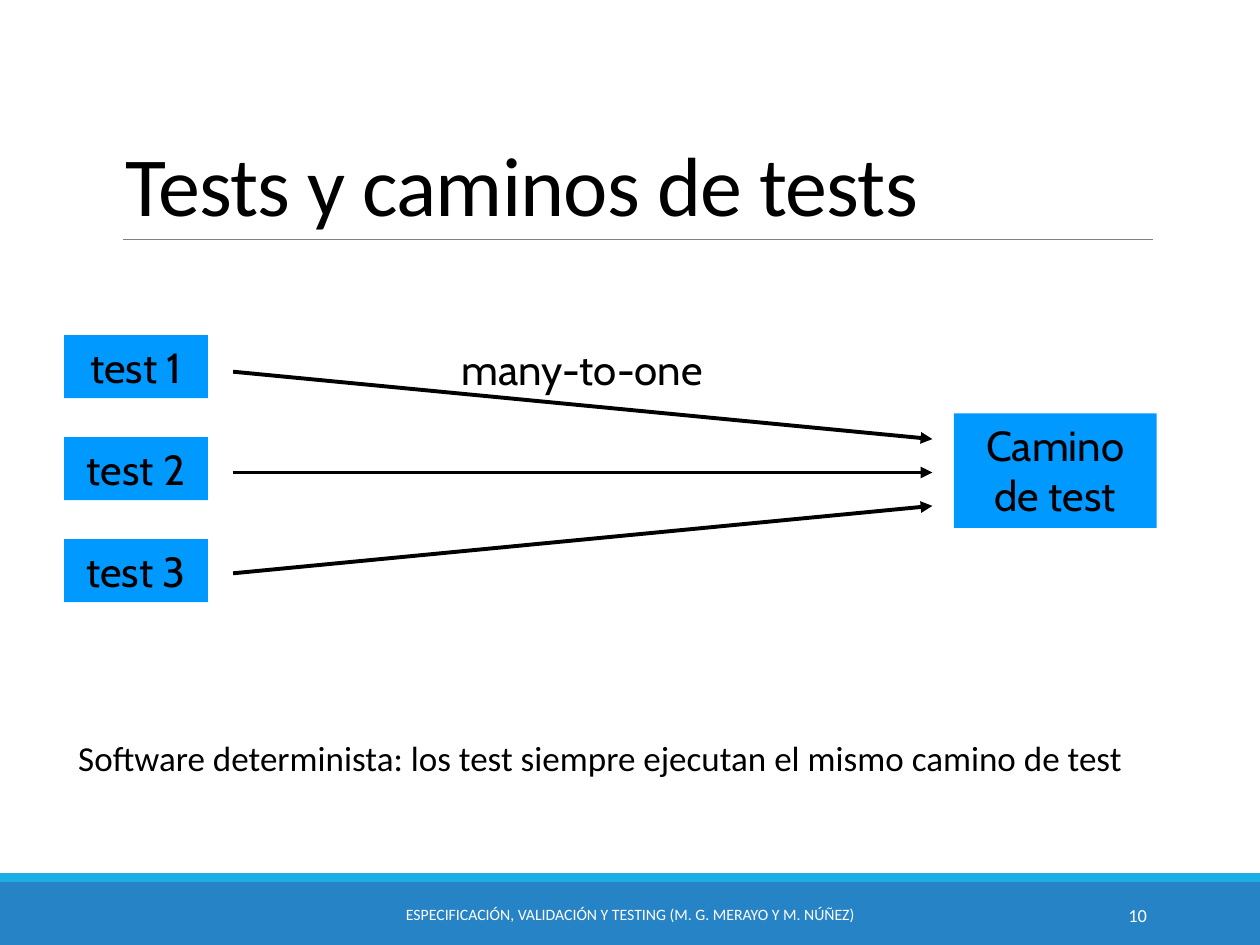
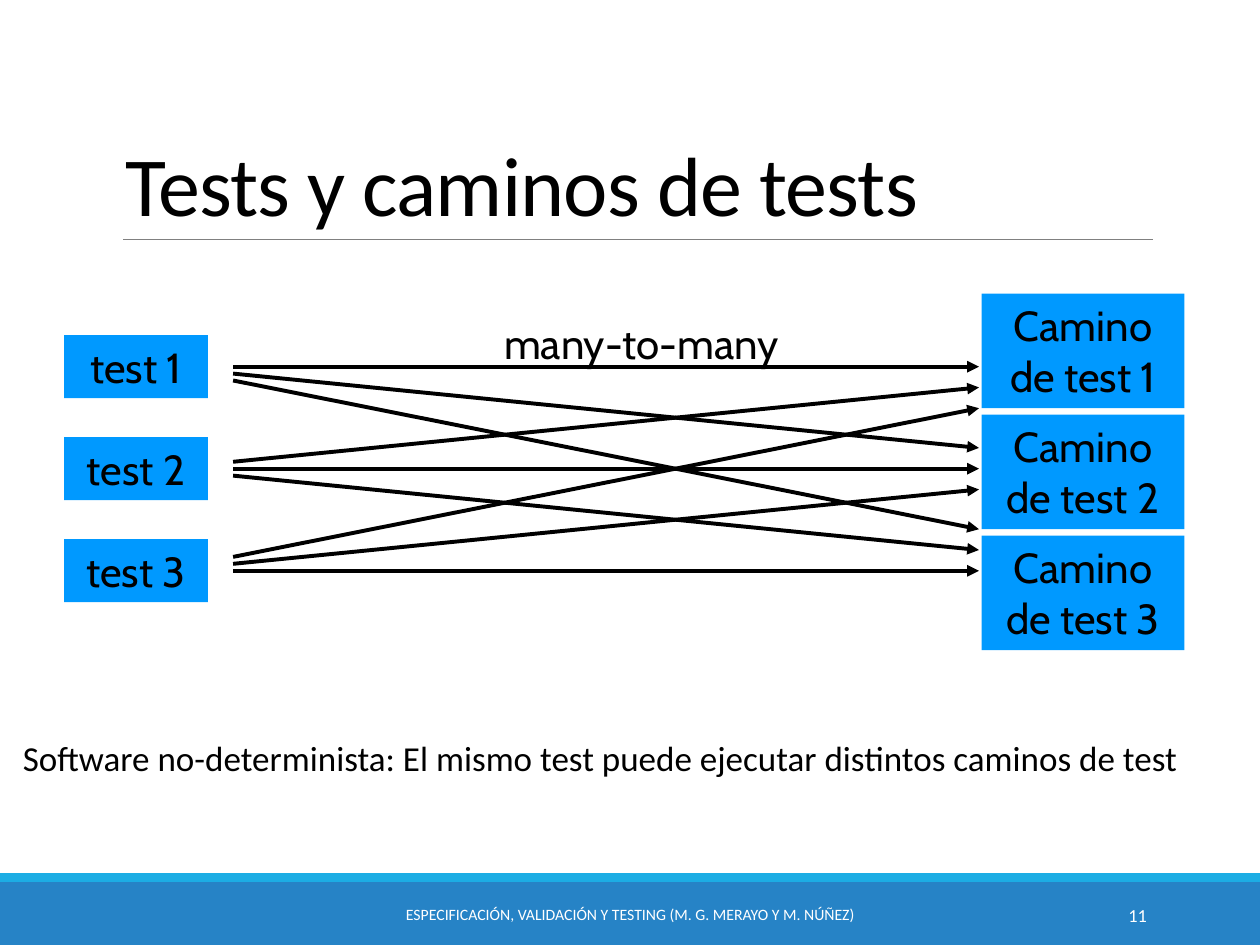
from typing import NamedTuple

from lxml import etree
from pptx import Presentation
from pptx.dml.color import RGBColor
from pptx.enum.shapes import MSO_CONNECTOR, MSO_SHAPE
from pptx.enum.text import MSO_ANCHOR, PP_ALIGN
from pptx.oxml.ns import qn
from pptx.util import Inches, Pt

RECTANGLE = MSO_SHAPE.RECTANGLE
STRAIGHT = MSO_CONNECTOR.STRAIGHT
LEFT, CENTER, RIGHT = PP_ALIGN.LEFT, PP_ALIGN.CENTER, PP_ALIGN.RIGHT
TOP, MIDDLE, BOTTOM = MSO_ANCHOR.TOP, MSO_ANCHOR.MIDDLE, MSO_ANCHOR.BOTTOM

COLORS = {
    "band": "2683C6",
    "accent": "1CADE4",
    "rule": "808080",
    "node": "0099FF",
    "ink": "000000",
    "footer": "FFFFFF",
}
BODY_FONT, NODE_FONT = "Calibri", "Cabin"

# Grid of 100 columns and 75 rows
SLIDE_WIDTH, SLIDE_HEIGHT = Inches(10), Inches(7.5)
COLUMN, ROW = SLIDE_WIDTH / 100, SLIDE_HEIGHT / 75

TITLE = "Tests y caminos de tests"
FOOTER = "ESPECIFICACIÓN, VALIDACIÓN Y TESTING (M. G. MERAYO Y M. NÚÑEZ)"
TESTS = ["test 1", "test 2", "test 3"]
TEST_PITCH = 8.1
PATH_PITCH = 9.6


class Box(NamedTuple):
    """An area in columns and rows of the grid."""
    left: float
    top: float
    width: float
    height: float

    def inner(self, left, top, width, height):
        return Box(self.left + left, self.top + top, width, height)

    def lengths(self):
        return (round(self.left * COLUMN), round(self.top * ROW),
                round(self.width * COLUMN), round(self.height * ROW))


TITLE_BOX = Box(9, 3.1, 82.5, 15.9)
DIAGRAM_BOX = Box(5.1, 23.3, 88.9, 28.3)
CAPTION_BOX = Box(-2, 58, 99.3, 4.4)
FOOTER_BOX = Box(0, 69.3, 100, 5.7)


def color(name):
    return RGBColor.from_string(COLORS[name])


def write(shape, text, size, font=BODY_FONT, ink="ink", align=CENTER, anchor=TOP):
    frame = shape.text_frame
    frame.word_wrap = True
    frame.vertical_anchor = anchor
    paragraph = frame.paragraphs[0]
    paragraph.text = text
    paragraph.alignment = align
    paragraph.font.name = font
    paragraph.font.size = Pt(size)
    paragraph.font.color.rgb = color(ink)
    return paragraph


def add_text(slide, box, text, size, **style):
    return write(slide.shapes.add_textbox(*box.lengths()), text, size, **style)


def add_rectangle(slide, box, fill):
    shape = slide.shapes.add_shape(RECTANGLE, *box.lengths())
    shape.shadow.inherit = False
    shape.fill.solid()
    shape.fill.fore_color.rgb = color(fill)
    shape.line.fill.background()
    return shape


def add_line(slide, start, end, ink="ink", weight=2.25, arrow=True):
    points = [round(value * unit) for point in (start, end)
              for value, unit in zip(point, (COLUMN, ROW))]
    connector = slide.shapes.add_connector(STRAIGHT, *points)
    connector.line.color.rgb = color(ink)
    connector.line.width = Pt(weight)
    if arrow:
        etree.SubElement(connector.line._get_or_add_ln(), qn("a:tailEnd"), type="triangle")
    etree.SubElement(connector._element.spPr, qn("a:effectLst"))


def add_title(slide, box):
    paragraph = add_text(slide, box, TITLE, 48, align=LEFT, anchor=BOTTOM)
    paragraph.line_spacing = 0.85
    paragraph.runs[0].font._element.set("spc", "-50")
    bottom = box.top + box.height
    add_line(slide, (box.left + 0.8, bottom), (box.left + box.width, bottom),
             "rule", 0.5, arrow=False)


def add_footer(slide, box, number):
    add_rectangle(slide, box.inner(0, 0.7, box.width, 5), "band")
    add_rectangle(slide, box.inner(0, 0, box.width, 0.7), "accent")
    style = {"ink": "footer", "anchor": MIDDLE}
    add_text(slide, box.inner(30.2, 1.3, 39.6, 4), FOOTER, 9, **style)
    add_text(slide, box.inner(81.2, 1.3, 10.8, 4), str(number), 10.5, align=RIGHT, **style)


def add_nodes(slide, first, pitch, labels):
    """Stack one labelled rectangle per label, downwards from the first."""
    for index, label in enumerate(labels):
        node = add_rectangle(slide, first.inner(0, index * pitch, first.width, first.height), "node")
        write(node, label, 24, font=NODE_FONT)


def add_tests(slide, box):
    add_nodes(slide, box.inner(0, 3.3, 11.4, 5), TEST_PITCH, TESTS)


def add_many_to_one(slide, box):
    """Every test leads to the same path."""
    add_tests(slide, box)
    add_nodes(slide, box.inner(70.6, 9.5, 16.1, 9.1), PATH_PITCH, ["Camino de test"])
    add_text(slide, box.inner(30.1, 3.5, 22, 5), "many-to-one", 24, font=NODE_FONT)
    middle = box.top + 14.2
    for offset in (-1, 0, 1):
        add_line(slide, (box.left + 13.4, middle + 8 * offset),
                 (box.left + 68.9, middle + 2.65 * offset))


def add_many_to_many(slide, box):
    """Every test leads to every path; arrows fan out at both ends."""
    add_tests(slide, box)
    paths = [f"Camino de {test}" for test in TESTS]
    add_nodes(slide, box.inner(72.8, 0, 16.1, 9.1), PATH_PITCH, paths)
    add_text(slide, box.inner(24.3, 1.4, 43, 5.1), "many-to-many", 24, font=NODE_FONT)
    first = box.top + 5.8
    for test in range(len(TESTS)):
        for path in range(len(paths)):
            start = first + test * TEST_PITCH + 0.55 * (path - test)
            end = first + path * TEST_PITCH + 1.65 * (test - path)
            add_line(slide, (box.left + 13.4, start), (box.left + 72.6, end))


def add_mapping_slide(presentation, number, add_diagram, caption):
    slide = presentation.slides.add_slide(presentation.slide_layouts[6])
    add_footer(slide, FOOTER_BOX, number)
    add_title(slide, TITLE_BOX)
    add_diagram(slide, DIAGRAM_BOX)
    add_text(slide, CAPTION_BOX, caption, 20)


def main():
    presentation = Presentation()
    presentation.slide_width, presentation.slide_height = SLIDE_WIDTH, SLIDE_HEIGHT
    add_mapping_slide(presentation, 10, add_many_to_one,
                      "Software determinista: los test siempre ejecutan el mismo camino de test")
    add_mapping_slide(presentation, 11, add_many_to_many,
                      "Software no-determinista: El mismo test puede ejecutar distintos caminos de test")
    presentation.save("out.pptx")


if __name__ == "__main__":
    main()
